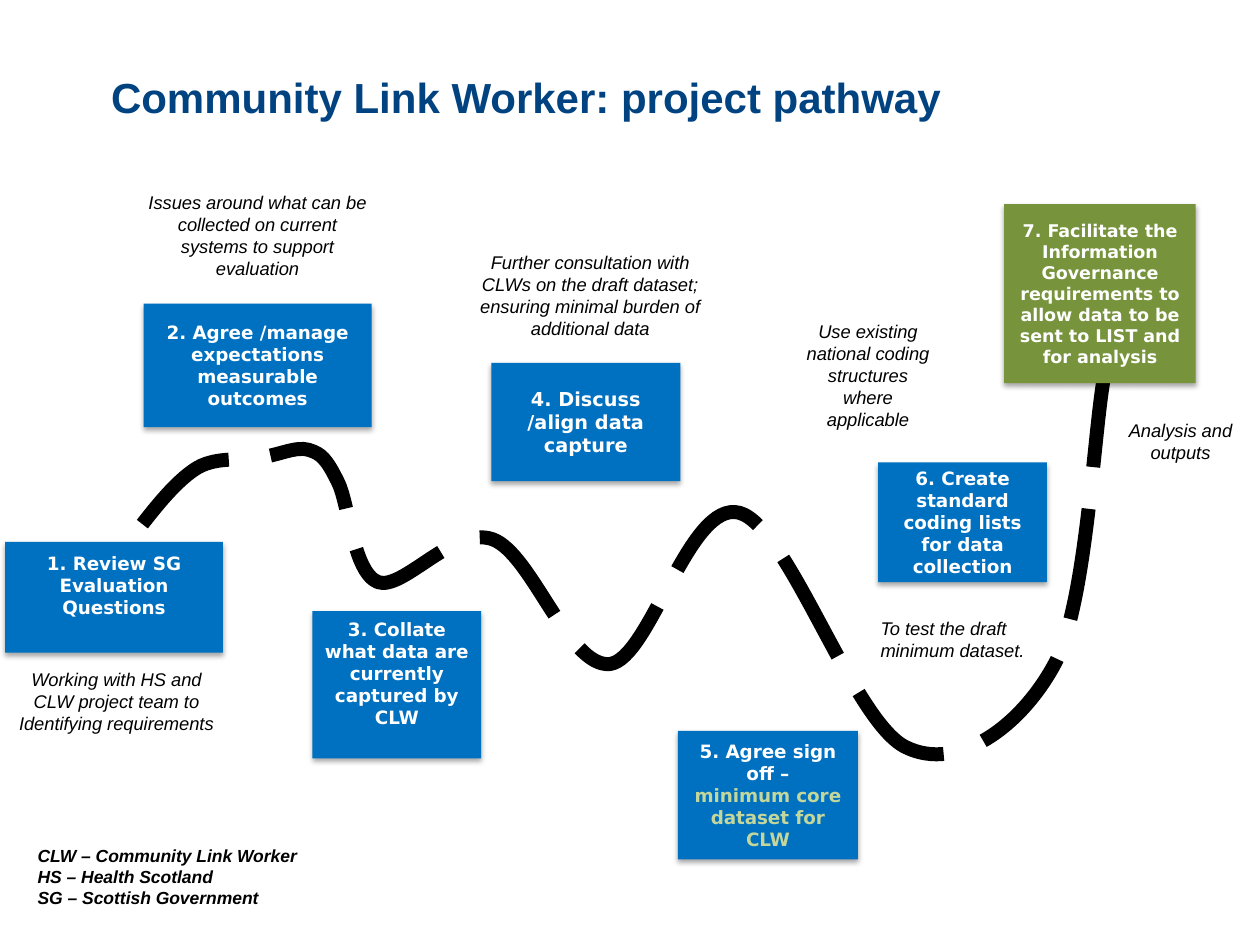
from lxml.etree import SubElement as Sub
from pptx import Presentation
from pptx.dml.color import RGBColor
from pptx.enum.dml import MSO_LINE_DASH_STYLE as Dash
from pptx.enum.shapes import MSO_SHAPE as Shape
from pptx.enum.text import MSO_ANCHOR as Anchor, MSO_AUTO_SIZE as Auto, PP_ALIGN as Align
from pptx.oxml.ns import qn
from pptx.util import Pt

PX = 9144
BLUE, GREEN, NAVY, WHITE, BLACK, PALE = "0070C0", "77933C", "004380", "FFFFFF", "000000", "C3D69B"


def color(text):
    return RGBColor.from_string(text)


def write(frame, lines, align, tint, size, **style):
    frame.word_wrap = True
    for i, line in enumerate(lines):
        para = frame.paragraphs[0] if i == 0 else frame.add_paragraph()
        para.alignment = align
        run = para.add_run()
        run.text = line
        look = {"name": "Arial", "size": Pt(size), **style}
        for key, value in look.items():
            setattr(run.font, key, value)
        run.font.color.rgb = color(tint)


deck = Presentation()
deck.slide_width, deck.slide_height = 1000 * PX, 750 * PX
slide = deck.slides.add_slide(deck.slide_layouts[5])
shapes = slide.shapes

title = shapes.title
title.left, title.top, title.width, title.height = [n * PX for n in (20, 52, 795, 50)]
title.text_frame.vertical_anchor = Anchor.TOP
write(title.text_frame, ["Community Link Worker: project pathway"], Align.CENTER, NAVY, 24, bold=True)

start = (113, 416)
curves = [
    [(127, 398), (142, 380), (157, 371)],
    [(173, 362), (193, 366), (207, 363)],
    [(222, 361), (235, 354), (245, 357)],
    [(255, 360), (259, 364), (268, 382)],
    [(277, 399), (280, 454), (300, 462)],
    [(320, 469), (360, 417), (391, 428)],
    [(422, 439), (451, 530), (484, 527)],
    [(516, 523), (547, 396), (587, 407)],
    [(626, 418), (677, 573), (719, 593)],
    [(760, 613), (810, 577), (837, 527)],
    [(863, 478), (868, 339), (877, 295)],
    [(886, 251), (890, 269), (891, 264)],
]
ends = [curve[-1] for curve in curves]
draft = shapes.build_freeform(*start, scale=PX)
draft.add_line_segments(ends, close=False)
road = draft.convert_to_shape()
left = min(x for x, y in [start] + ends)
top = min(y for x, y in [start] + ends)
track = road.element.find(".//" + qn("a:path"))
for step, curve in zip(track.findall(qn("a:lnTo")), curves):
    track.remove(step)
    bend = Sub(track, qn("a:cubicBezTo"))
    for x, y in curve:
        Sub(bend, qn("a:pt"), x=str(x - left), y=str(y - top))
road.shadow.inherit = False
road.fill.background()
road.line.color.rgb = color(BLACK)
road.line.width = Pt(8)
road.line.dash_style = Dash.LONG_DASH
Sub(road.element.spPr.find(qn("a:ln")), qn("a:tailEnd"), type="triangle")

boxes = [
    ((4, 430, 173, 88), BLUE, 10.5, 24, "1. Review SG Evaluation Questions"),
    ((538, 580, 143, 102), BLUE, 10.5, 5, "5. Agree sign off –"),
    ((697, 367, 134, 95), BLUE, 10.5, 5, "6. Create standard coding lists for data collection"),
    ((390, 288, 150, 94), BLUE, 11, 5, "4. Discuss /align data capture"),
    ((248, 485, 134, 117), BLUE, 10.5, 24, "3. Collate what data are currently captured by CLW"),
    ((114, 241, 181, 98), BLUE, 10.5, 5, "2. Agree /manage expectations measurable outcomes"),
    ((797, 162, 152, 142), GREEN, 10, 5,
     "7. Facilitate the Information Governance requirements to allow data to be sent to LIST and for analysis"),
]
for place, fill, size, foot, text in boxes:
    box = shapes.add_shape(Shape.RECTANGLE, *[n * PX for n in place])
    box.fill.solid()
    box.fill.fore_color.rgb = color(fill)
    box.line.fill.background()
    box.shadow.inherit = False
    glow = Sub(box.element.spPr.find(qn("a:effectLst")), qn("a:outerShdw"),
               blurRad=str(Pt(3.1)), dist=str(Pt(1.8)), dir="5400000", rotWithShape="0")
    Sub(Sub(glow, qn("a:srgbClr"), val=BLACK), qn("a:alpha"), val="35000")
    frame = box.text_frame
    frame.vertical_anchor = Anchor.MIDDLE
    frame.margin_bottom = foot * PX
    lines = [text]
    if text.startswith("5."):
        lines.append("minimum core dataset for CLW")
    write(frame, lines, Align.CENTER, WHITE, size, name="DejaVu Sans", bold=True)
    for para in frame.paragraphs[1:]:
        para.runs[0].font.color.rgb = color(PALE)

plain = {"size": 10.5, "italic": True}
strong = {"size": 10, "italic": True, "bold": True}
notes = [
    ((0, 525, 185, 63), Align.CENTER, plain, ["Working with HS and CLW project team to Identifying requirements"]),
    ((106, 147, 197, 81), Align.CENTER, plain,
     ["Issues around what can be collected on current systems to support evaluation"]),
    ((366, 194, 205, 81), Align.CENTER, plain,
     ["Further consultation with CLWs on the draft dataset; ensuring minimal burden of additional data"]),
    ((874, 328, 126, 64), Align.CENTER, plain, ["Analysis and outputs"]),
    ((626, 249, 126, 98), Align.CENTER, plain, ["Use existing national coding structures where applicable"]),
    ((20, 666, 268, 61), Align.LEFT, strong,
     ["CLW – Community Link Worker", "HS – Health Scotland", "SG – Scottish Government"]),
    ((689, 485, 157, 47), Align.LEFT, plain, ["To test the draft minimum dataset."]),
]
for place, align, style, lines in notes:
    frame = shapes.add_textbox(*[n * PX for n in place]).text_frame
    frame.auto_size = Auto.SHAPE_TO_FIT_TEXT
    write(frame, lines, align, BLACK, **style)

deck.save("out.pptx")
